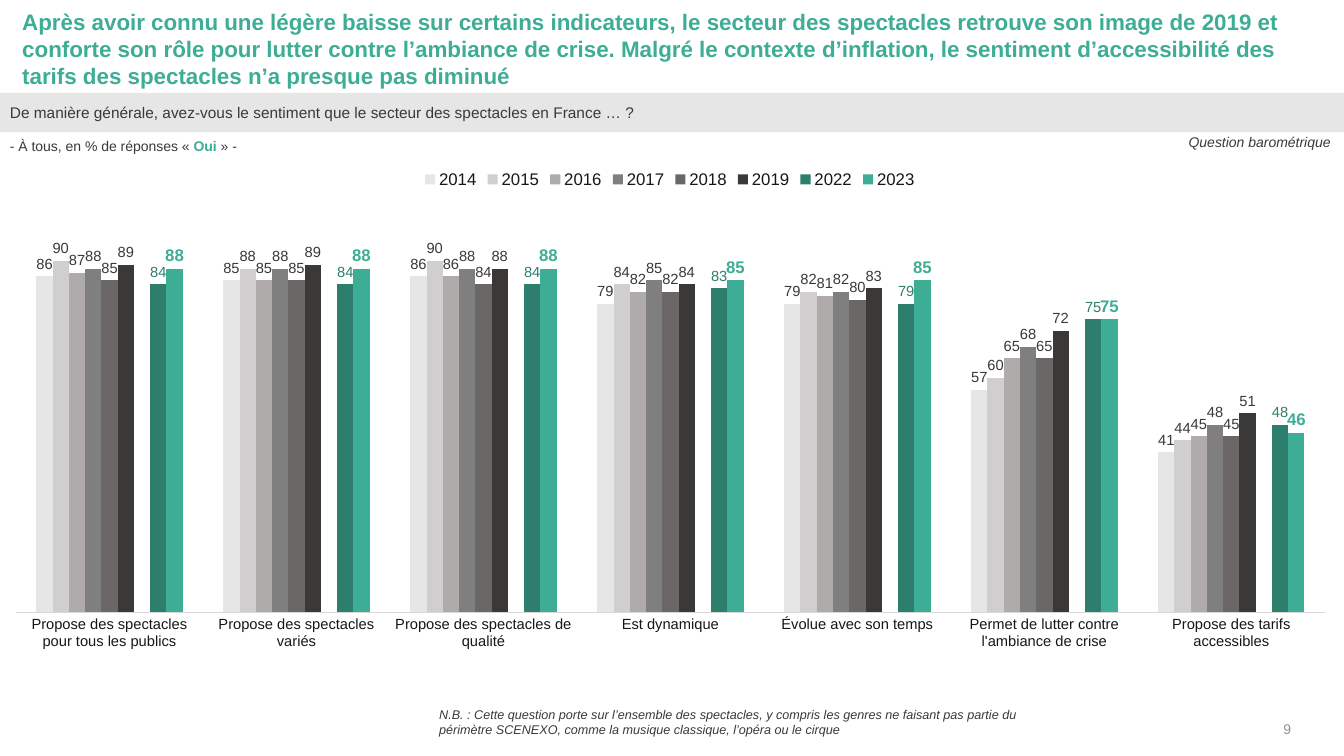
from lxml import etree
from pptx import Presentation
from pptx.chart.data import CategoryChartData as Data
from pptx.dml.color import RGBColor as RGB
from pptx.enum.chart import (XL_CHART_TYPE as Kind, XL_LABEL_POSITION as Spot,
                             XL_LEGEND_POSITION as Side, XL_TICK_MARK as Tick)
from pptx.enum.shapes import MSO_SHAPE as Shape
from pptx.enum.text import MSO_ANCHOR as Anchor, MSO_AUTO_SIZE as Fit, PP_ALIGN as Align
from pptx.oxml.ns import qn
from pptx.util import Cm, Pt

FONT = "Arial"
GREEN, DARK, BLACK = "3EAD95", "3B3838", "181717"

TITLE = ("Après avoir connu une légère baisse sur certains indicateurs, le secteur des "
         "spectacles retrouve son image de 2019 et conforte son rôle pour lutter contre "
         "l’ambiance de crise. Malgré le contexte d’inflation, le sentiment "
         "d’accessibilité des tarifs des spectacles n’a presque pas diminué")
ASK = ("De manière générale, avez-vous le sentiment que le secteur des spectacles "
       "en France … ?")
NOTE = ("N.B. : Cette question porte sur l’ensemble des spectacles, y compris les genres "
        "ne faisant pas partie du périmètre SCENEXO, comme la musique classique, "
        "l’opéra ou le cirque")

TOPICS = ["Propose des spectacles pour tous les publics", "Propose des spectacles variés",
          "Propose des spectacles de qualité", "Est dynamique", "Évolue avec son temps",
          "Permet de lutter contre l'ambiance de crise", "Propose des tarifs accessibles"]
GAP = "Series 7"
YEARS = [
    ("2014", "E7E6E6", [86, 85, 86, 79, 79, 57, 41]),
    ("2015", "D0CECE", [90, 88, 90, 84, 82, 60, 44]),
    ("2016", "AFABAB", [87, 85, 86, 82, 81, 65, 45]),
    ("2017", "7F7F7F", [88, 88, 88, 85, 82, 68, 48]),
    ("2018", "6B6767", [85, 85, 84, 82, 80, 65, 45]),
    ("2019", DARK, [89, 89, 88, 84, 83, 72, 51]),
    (GAP, "256557", [None] * len(TOPICS)),
    ("2022", "2E7E6D", [84, 84, 84, 83, 79, 75, 48]),
    ("2023", GREEN, [88, 88, 88, 85, 85, 75, 46]),
]
LABELS = {"2022": (10.5, "2E7E6D"), "2023": (12, GREEN, True)}


def tint(code):
    """Turn a hex string into a colour."""
    return RGB.from_string(code)


def style(font, size, color, bold=False, italic=False):
    """Format a font."""
    font.name, font.size = FONT, Pt(size)
    font.bold, font.italic = bold, italic
    font.color.rgb = tint(color)


def place(area):
    """Convert an area in centimetres to lengths."""
    return [Cm(side) for side in area]


def write(shape, text, size, color, align=Align.LEFT, anchor=Anchor.TOP, pad=None, **look):
    """Fill a shape with one formatted paragraph."""
    frame = shape.text_frame
    frame.text = text
    frame.word_wrap, frame.auto_size = True, Fit.NONE
    frame.vertical_anchor = anchor
    if pad:
        (frame.margin_left, frame.margin_top,
         frame.margin_right, frame.margin_bottom) = place(pad)
    para = frame.paragraphs[0]
    para.alignment = align
    for run in para.runs:
        style(run.font, size, color, **look)
    return para


def add_text(slide, area, *args, **look):
    """Add a text box."""
    return write(slide.shapes.add_textbox(*place(area)), *args, **look)


def add_title(slide, area, text):
    """Move and fill the title placeholder."""
    title = slide.shapes.title
    title.left, title.top, title.width, title.height = place(area)
    write(title, text, 16, GREEN, anchor=Anchor.MIDDLE, pad=(0, 0, 0, 0), bold=True)


def add_band(slide, area, text):
    """Add the grey question band."""
    band = slide.shapes.add_shape(Shape.RECTANGLE, *place(area))
    band.shadow.inherit = False
    band.fill.solid()
    band.fill.fore_color.rgb = tint("E6E6E6")
    band.line.fill.background()
    write(band, text, 11, DARK, Align.JUSTIFY, Anchor.MIDDLE, (0.25, 0.25, 0.5, 0.25))


def set_plot(chart, **box):
    """Fix the inner plot area as shares of the chart."""
    area = chart.element.find(".//" + qn("c:plotArea"))
    for old in area.findall(qn("c:layout")):
        area.remove(old)
    layout = etree.Element(qn("c:layout"))
    area.insert(0, layout)
    manual = etree.SubElement(layout, qn("c:manualLayout"))
    parts = {"layoutTarget": "inner", "xMode": "edge", "yMode": "edge", **box}
    for name, value in parts.items():
        etree.SubElement(manual, qn("c:" + name)).set("val", str(value))


def hide_entry(legend, index):
    """Drop one series from the legend."""
    entry = etree.Element(qn("c:legendEntry"))
    for name, value in (("idx", index), ("delete", 1)):
        etree.SubElement(entry, qn("c:" + name)).set("val", str(value))
    legend._element.find(qn("c:legendPos")).addnext(entry)


def set_axes(chart):
    """Format the topic axis and hide the value axis."""
    axis = chart.category_axis
    axis.major_tick_mark = axis.minor_tick_mark = Tick.NONE
    axis.has_major_gridlines = False
    axis.format.line.color.rgb = tint("D9D9D9")
    axis.format.line.width = Pt(0.75)
    style(axis.tick_labels.font, 10.5, BLACK)
    scale = chart.value_axis
    scale.minimum_scale, scale.maximum_scale = 0, 100
    scale.has_major_gridlines = scale.visible = False


def set_bars(plot):
    """Colour and label each year."""
    plot.gap_width, plot.overlap, plot.vary_by_categories = 250, 0, False
    for bars, (year, color, _) in zip(plot.series, YEARS):
        bars.format.fill.solid()
        bars.format.fill.fore_color.rgb = tint(color)
        labels = bars.data_labels
        labels.show_value, labels.position = True, Spot.OUTSIDE_END
        style(labels.font, *LABELS.get(year, (10.5, DARK)))


def add_bars(slide, area):
    """Add the column chart by topic and year."""
    data = Data()
    data.categories = TOPICS
    for year, _, values in YEARS:
        data.add_series(year, values)
    chart = slide.shapes.add_chart(Kind.COLUMN_CLUSTERED, *place(area), data).chart
    style(chart.font, 10, "014537")
    chart.has_title = False
    chart.has_legend = True
    legend = chart.legend
    legend.position, legend.include_in_layout = Side.TOP, False
    style(legend.font, 12, BLACK)
    hide_entry(legend, [year for year, _, _ in YEARS].index(GAP))
    set_axes(chart)
    set_bars(chart.plots[0])
    set_plot(chart, x=0.012, y=0.116, w=0.977, h=0.723)


def add_base(slide, area):
    """Add the base line with its highlighted answer."""
    para = add_text(slide, area, "- À tous, en % de réponses « ", 10, DARK)
    for text, color, bold in (("Oui ", GREEN, True), ("» -", DARK, False)):
        run = para.add_run()
        run.text = text
        style(run.font, 10, color, bold)


def main():
    """Build and save the slide."""
    deck = Presentation()
    deck.slide_width, deck.slide_height = Cm(33.87), Cm(19.05)
    slide = deck.slides.add_slide(deck.slide_layouts[5])
    add_title(slide, (0.56, 0.76, 31.98, 0.91), TITLE)
    add_band(slide, (0, 2.34, 33.87, 0.99), ASK)
    add_base(slide, (0, 3.33, 16.94, 0.69))
    add_bars(slide, (0, 4.01, 33.76, 13.61))
    add_text(slide, (29.59, 3.25, 4.19, 0.66), "Question barométrique", 10, DARK,
             Align.RIGHT, italic=True)
    add_text(slide, (10.82, 17.68, 16.1, 0.99), NOTE, 9, DARK, italic=True)
    add_text(slide, (31.04, 17.96, 1.5, 0.61), "9", 10, "8C9491", Align.RIGHT,
             Anchor.BOTTOM, (0, 0, 0, 0))
    deck.save("out.pptx")


if __name__ == "__main__":
    main()
